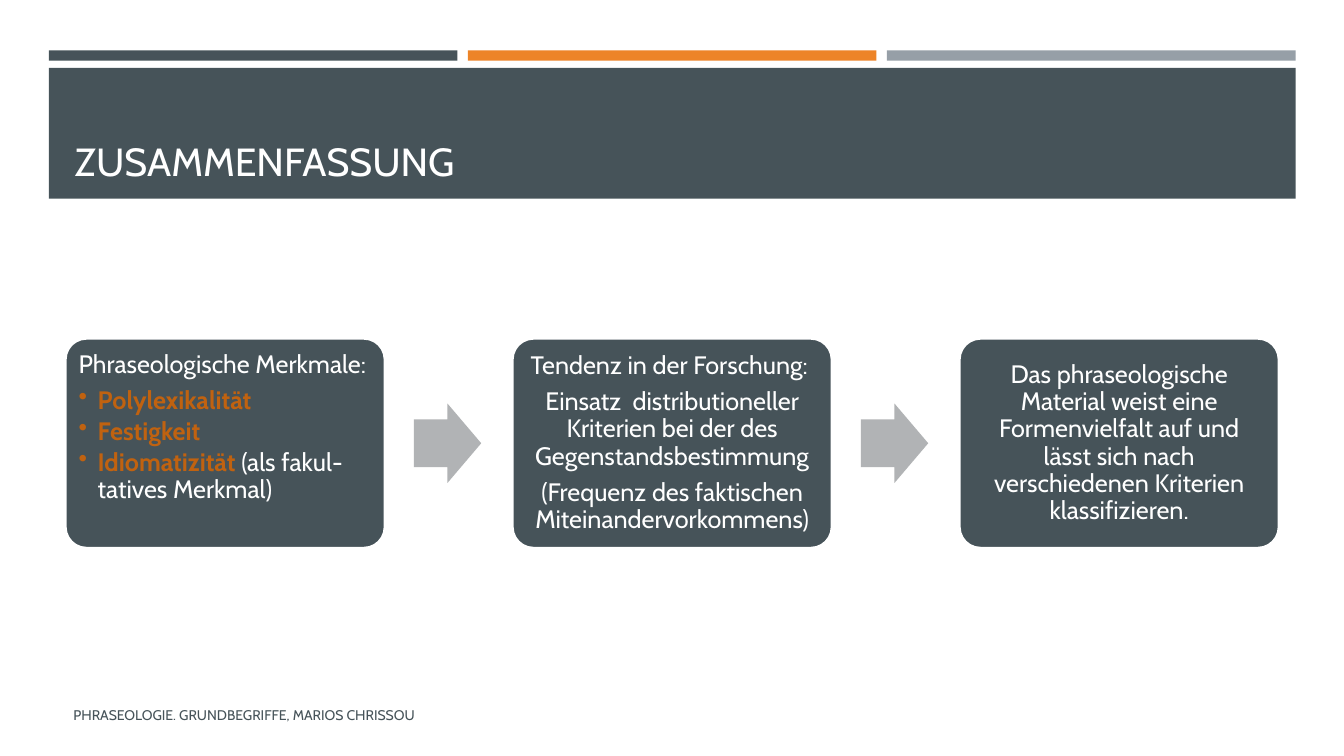
import pptx
import pptx.util
import pptx.dml.color
import pptx.enum.shapes
import pptx.enum.text
from dataclasses import dataclass
from lxml import etree

Cm = pptx.util.Cm
Pt = pptx.util.Pt
Kind = pptx.enum.shapes.MSO_SHAPE
Anchor = pptx.enum.text.MSO_ANCHOR
Align = pptx.enum.text.PP_ALIGN


@dataclass(frozen=True)
class Theme:
    font: str = "Cabin"
    dark: str = "465359"
    orange: str = "ED8428"
    grey: str = "969FA7"
    arrow: str = "B1B3B5"
    accent: str = "C06210"
    white: str = "FFFFFF"
    title: int = 28
    body: int = 18
    foot: int = 10


theme = Theme()

CARDS = [
    (Anchor.TOP, [
        ("head", [("Phraseologische Merkmale:", False)]),
        ("item", [("Polylexikalität", True)]),
        ("item", [("Festigkeit", True)]),
        ("item", [("Idiomatizität ", True), ("(als fakul-tatives Merkmal)", False)]),
    ]),
    (Anchor.MIDDLE, [
        ("mid", [("Tendenz in der Forschung: ", False)]),
        ("mid", [("Einsatz  distributioneller Kriterien bei der des Gegenstandsbestimmung", False)]),
        ("mid", [("(Frequenz des faktischen Miteinandervorkommens)", False)]),
    ]),
    (Anchor.MIDDLE, [
        ("mid", [("Das phraseologische Material weist eine Formenvielfalt auf und lässt sich "
                  "nach verschiedenen Kriterien klassifizieren.", False)]),
    ]),
]

FORMATS = {
    "head": {"alignment": Align.LEFT, "line_spacing": 0.9, "space_after": Pt(6.3)},
    "item": {"alignment": Align.LEFT, "line_spacing": 0.9, "space_after": Pt(2.7)},
    "mid": {"alignment": Align.CENTER, "line_spacing": 0.9, "space_after": Pt(6.3)},
}


def apply(target, values):
    for name, value in values.items():
        setattr(target, name, value)


def color(code):
    return pptx.dml.color.RGBColor.from_string(code)


def write(para, text, size, code, bold=False):
    run = para.add_run()
    run.text = text
    apply(run.font, {"name": theme.font, "size": Pt(size), "bold": bold})
    run.font.color.rgb = color(code)


def block(slide, kind, box, fill):
    shape = slide.shapes.add_shape(kind, *map(Cm, box))
    shape.shadow.inherit = False
    shape.fill.solid()
    shape.fill.fore_color.rgb = color(fill)
    shape.line.fill.background()
    return shape


def label(slide, box, text, size, code, values):
    frame = slide.shapes.add_textbox(*map(Cm, box)).text_frame
    apply(frame, values)
    write(frame.paragraphs[0], text, size, code)


def bullet(para):
    props = para._p.get_or_add_pPr()
    props.set("marL", str(Cm(0.48)))
    props.set("indent", str(-Cm(0.48)))
    space = "{http://schemas.openxmlformats.org/drawingml/2006/main}"
    tint = etree.SubElement(props, space + "buClr")
    etree.SubElement(tint, space + "srgbClr", val=theme.accent)
    etree.SubElement(props, space + "buChar", char="•")


def header(slide, box):
    left, top, width, height = box
    gap = 0.26
    bar = (width - 2 * gap) / 3
    for i, fill in enumerate((theme.dark, theme.orange, theme.grey)):
        block(slide, Kind.RECTANGLE, (left + i * (bar + gap), top, bar, 0.26), fill)
    block(slide, Kind.RECTANGLE, (left, top + 0.44, width, height - 0.44), theme.dark)
    label(slide, (left + 0.4, top + 0.69, width - 0.8, height - 0.92), "ZUSAMMENFASSUNG",
          theme.title, theme.white, {"word_wrap": True, "vertical_anchor": Anchor.BOTTOM})


def card(slide, box, anchor, lines):
    shape = block(slide, Kind.ROUNDED_RECTANGLE, box, theme.dark)
    shape.adjustments[0] = 0.1
    shape.line.color.rgb = color(theme.white)
    shape.line.width = Pt(1.75)
    frame = shape.text_frame
    apply(frame, {"word_wrap": True, "vertical_anchor": anchor})
    apply(frame, dict.fromkeys(
        ("margin_left", "margin_top", "margin_right", "margin_bottom"), Cm(0.18)))
    for i, (style, runs) in enumerate(lines):
        para = frame.add_paragraph() if i else frame.paragraphs[0]
        apply(para, FORMATS[style])
        if style == "item":
            bullet(para)
        for text, strong in runs:
            write(para, text, theme.body, theme.accent if strong else theme.white, strong)


def process(slide, box):
    left, top, width, height = box
    wide, long, tall = 8.05, 1.7, 2.0
    step = (width - wide) / (len(CARDS) - 1)
    for i, (anchor, lines) in enumerate(CARDS):
        x = left + i * step
        card(slide, (x, top, wide, height), anchor, lines)
        if i < len(CARDS) - 1:
            mark = (x + wide + (step - wide - long) / 2 - 0.03,
                    top + (height - tall) / 2, long, tall)
            arrow = block(slide, Kind.RIGHT_ARROW, mark, theme.arrow)
            arrow.adjustments[0] = 0.6
            arrow.adjustments[1] = 0.5


def footer(slide, box):
    label(slide, box, "PHRASEOLOGIE. GRUNDBEGRIFFE, MARIOS CHRISSOU",
          theme.foot, theme.dark, {"word_wrap": False})


def main():
    deck = pptx.Presentation()
    apply(deck, {"slide_width": Cm(33.87), "slide_height": Cm(19.05)})
    slide = deck.slides.add_slide(deck.slide_layouts[6])
    header(slide, (1.23, 1.27, 31.42, 3.74))
    process(slide, (1.65, 8.53, 30.58, 5.28))
    footer(slide, (1.6, 17.68, 9.12, 0.69))
    deck.save("out.pptx")


if __name__ == "__main__":
    main()
